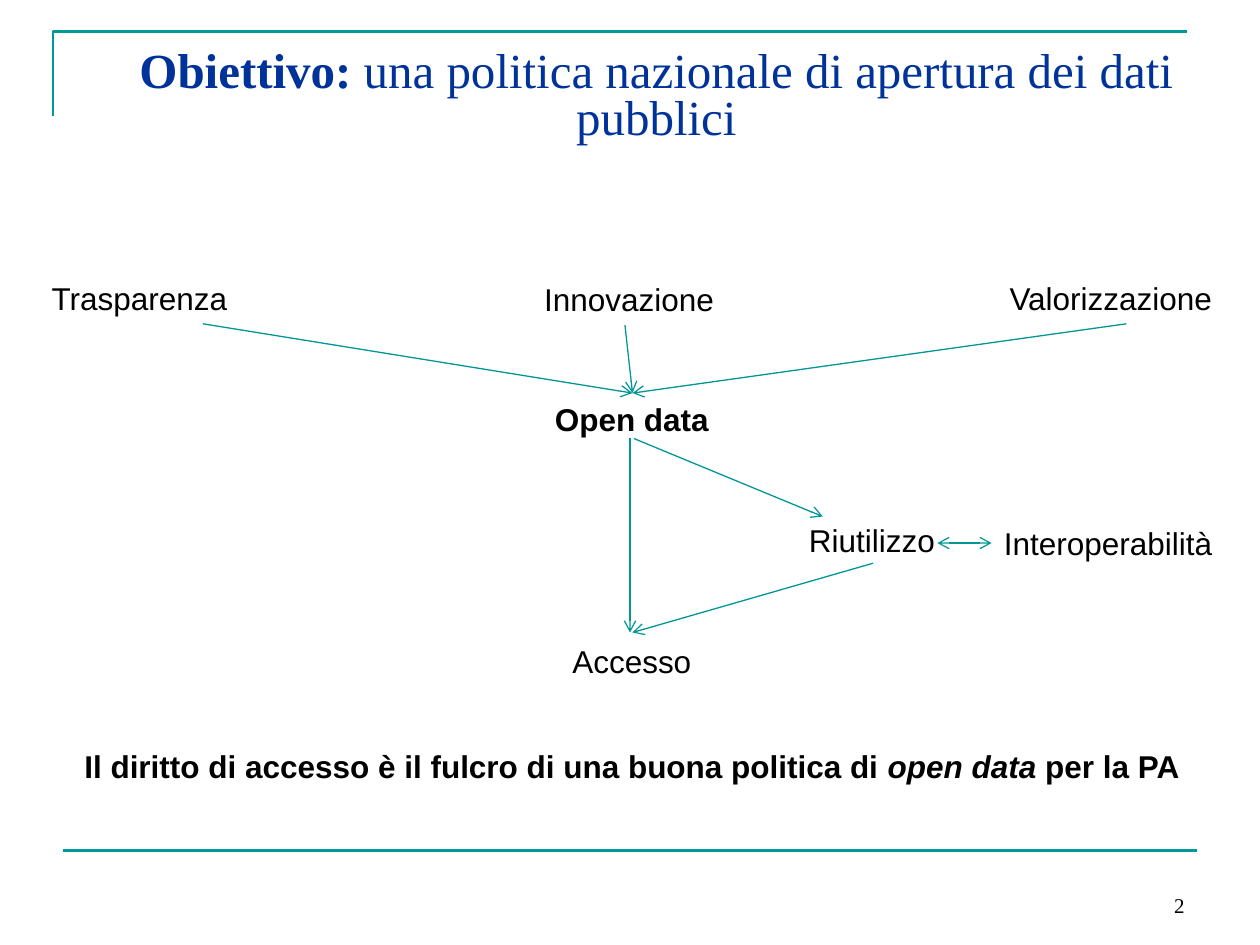
from lxml.etree import SubElement
from pptx import Presentation
from pptx.dml.color import RGBColor
from pptx.enum.shapes import MSO_CONNECTOR
from pptx.enum.text import MSO_ANCHOR, PP_ALIGN
from pptx.oxml.ns import qn
from pptx.util import Inches, Pt

FRAME = "009999"
ARROW = "009696"
BLACK = "000000"
NAVY = "003399"


def rgb(value):
    return RGBColor.from_string(value)


def set_font(font, size=18, name="Arial", color=BLACK, bold=False):
    font.size = Pt(size)
    font.name = name
    font.color.rgb = rgb(color)
    font.bold = bold


def write(p, text, align=PP_ALIGN.LEFT, **style):
    p.text = text
    p.alignment = align
    set_font(p.font, **style)


def add_text(s, box, text, align=PP_ALIGN.LEFT, anchor=MSO_ANCHOR.TOP, wrap=True, **style):
    tf = s.shapes.add_textbox(*map(Inches, box)).text_frame
    tf.word_wrap = wrap
    tf.vertical_anchor = anchor
    p = tf.paragraphs[0]
    write(p, text, align, **style)
    return p


def add_line(s, start, end, color=ARROW, width=0.75, ends=()):
    line = s.shapes.add_connector(MSO_CONNECTOR.STRAIGHT, *map(Inches, start + end))
    line.line.color.rgb = rgb(color)
    line.line.width = Pt(width)
    for tag in ends:
        SubElement(line.line._get_or_add_ln(), qn(f"a:{tag}"), type="arrow")
    SubElement(line._element.spPr, qn("a:effectLst"))


def add_frame(s):
    builder = s.shapes.build_freeform(Inches(0.42), Inches(0.92))
    builder.add_line_segments(
        [(Inches(0.42), Inches(0.25)), (Inches(9.42), Inches(0.25))], close=False
    )
    sp = builder.convert_to_shape()
    sp.shadow.inherit = False
    sp.fill.background()
    sp.line.color.rgb = rgb(FRAME)
    sp.line.width = Pt(1.5)
    add_line(s, (0.5, 6.75), (9.5, 6.75), FRAME, 1.5)


def add_title(s):
    sp = s.shapes.title
    sp.left, sp.top, sp.width, sp.height = map(Inches, (0.46, 0.3, 9.5, 1.25))
    tf = sp.text_frame
    tf.vertical_anchor = MSO_ANCHOR.TOP
    tf.margin_top = Inches(0.1)
    p = tf.paragraphs[0]
    write(p, "", PP_ALIGN.CENTER, size=28, name="Times New Roman", color=NAVY)
    p.line_spacing = 0.8
    r = p.add_run()
    r.text = "Obiettivo: "
    r.font.bold = True
    p.add_run().text = "una politica nazionale di apertura dei dati pubblici"


def add_concepts(s):
    widths = (3.81, 0.88, 4.72)
    table = s.shapes.add_table(
        4, 3, Inches(0.31), Inches(1.9), Inches(sum(widths)), Inches(3.84)
    ).table
    table.first_row = table.horz_banding = False
    for col, width in zip(table.columns, widths):
        col.width = Inches(width)
    for cell in table.iter_cells():
        cell.fill.background()
        cell.vertical_anchor = MSO_ANCHOR.MIDDLE
    concepts = [
        (0, 0, 1, "Trasparenza", PP_ALIGN.LEFT, False),
        (0, 2, 2, "Valorizzazione", PP_ALIGN.RIGHT, False),
        (1, 0, 2, "Open data", PP_ALIGN.CENTER, True),
        (2, 1, 2, "Riutilizzo", PP_ALIGN.CENTER, False),
        (3, 0, 2, "Accesso", PP_ALIGN.CENTER, False),
    ]
    for row, first, last, text, align, bold in concepts:
        cell = table.cell(row, first)
        if last > first:
            cell.merge(table.cell(row, last))
        write(cell.text_frame.paragraphs[0], text, align, bold=bold)


def add_arrows(s):
    arrows = [
        ((1.61, 2.57), (5.02, 3.12)),
        ((4.96, 2.58), (5.02, 3.12)),
        ((8.94, 2.57), (5.02, 3.12)),
        ((5.03, 3.48), (6.53, 4.1)),
        ((5, 3.48), (5, 5.02)),
        ((6.93, 4.47), (5.02, 5.02)),
    ]
    for start, end in arrows:
        add_line(s, start, end, ends=("tailEnd",))
    add_line(s, (7.44, 4.31), (7.87, 4.31), ends=("headEnd", "tailEnd"))


def add_conclusion(s):
    p = add_text(
        s, (0.31, 5.88, 9.41, 0.4),
        "Il diritto di accesso è il fulcro di una buona politica di ",
        PP_ALIGN.CENTER, bold=True,
    )
    r = p.add_run()
    r.text = "open data "
    r.font.italic = True
    p.add_run().text = "per la PA"


def main():
    prs = Presentation()
    prs.slide_width, prs.slide_height = Inches(10), Inches(7.5)
    s = prs.slides.add_slide(prs.slide_layouts[5])
    add_frame(s)
    add_title(s)
    add_text(s, (7.17, 6.83, 2.33, 0.5), "2", PP_ALIGN.RIGHT, MSO_ANCHOR.BOTTOM,
             size=12, name="Times New Roman")
    add_concepts(s)
    add_arrows(s)
    add_conclusion(s)
    add_text(s, (4.13, 3.83, 5.59, 0.96), "Interoperabilità", PP_ALIGN.RIGHT, MSO_ANCHOR.MIDDLE)
    add_text(s, (4.22, 2.17, 1.56, 0.4), "Innovazione", wrap=False)
    prs.save("out.pptx")


if __name__ == "__main__":
    main()
